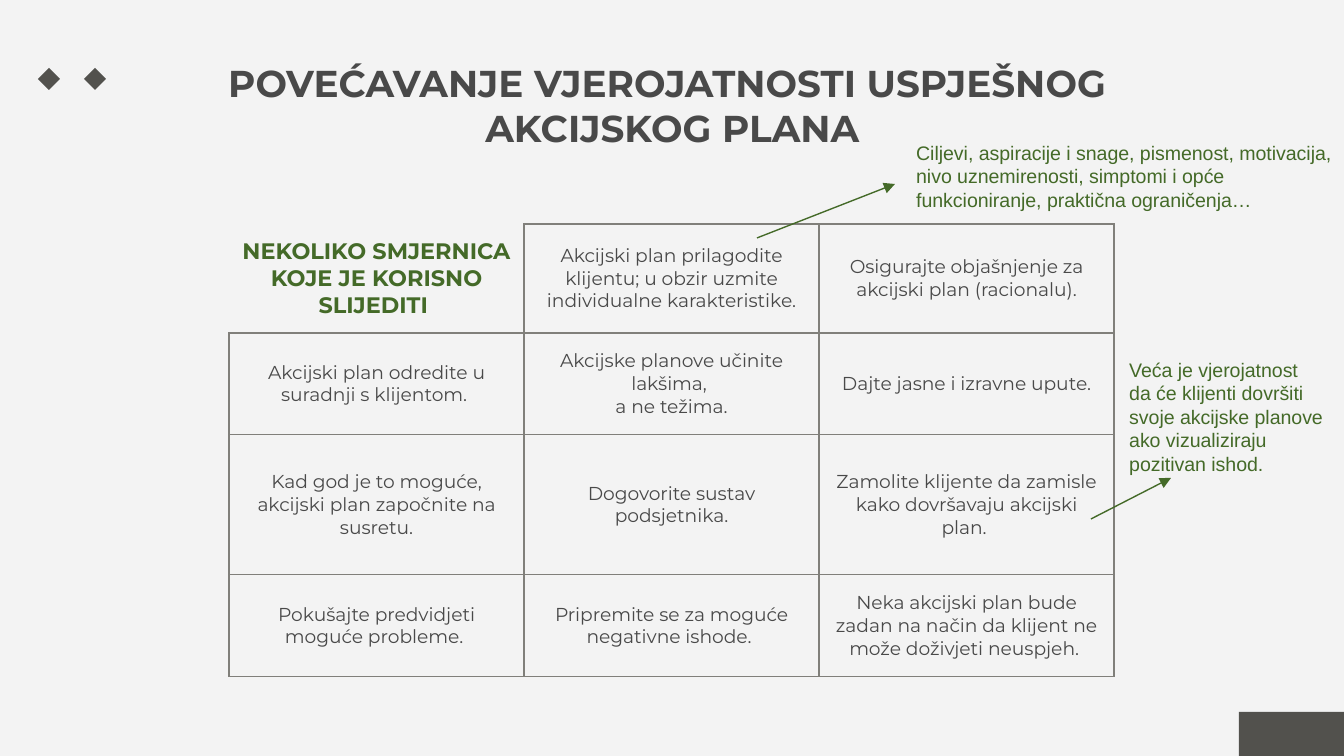
from dataclasses import dataclass

from lxml.etree import SubElement
from pptx import Presentation
from pptx.dml.color import RGBColor
from pptx.enum.shapes import MSO_CONNECTOR, MSO_SHAPE
from pptx.enum.text import MSO_ANCHOR, PP_ALIGN
from pptx.oxml.ns import qn
from pptx.util import Pt


@dataclass(frozen=True)
class Theme:
    """Colours, fonts and type sizes of the slide."""
    paper: str = "F3F3F3"
    ink: str = "494949"
    mark: str = "52514D"
    rule: str = "807F7A"
    green: str = "446A28"
    sans: str = "Montserrat"
    plain: str = "Arial"
    title: float = 20
    head: float = 12
    body: float = 10
    note: float = 10.5
    line: float = 0.75


THEME = Theme()
SCALE = 914400 / 134.4
PAD = 13

TITLE = "POVEĆAVANJE VJEROJATNOSTI USPJEŠNOG \vAKCIJSKOG PLANA"
ROWS = [
    (109, ["NEKOLIKO SMJERNICA KOJE JE KORISNO SLIJEDITI ",
           "Akcijski plan prilagodite klijentu; u obzir uzmite individualne karakteristike.",
           "Osigurajte objašnjenje za akcijski plan (racionalu)."]),
    (102, ["Akcijski plan odredite u suradnji s klijentom. ",
           "Akcijske planove učinite lakšima, \na ne težima.",
           "Dajte jasne i izravne upute."]),
    (140, ["Kad god je to moguće, akcijski plan započnite na susretu.",
           "Dogovorite sustav podsjetnika.",
           "Zamolite klijente da zamisle kako dovršavaju akcijski plan. "]),
    (102, ["Pokušajte predvidjeti moguće probleme. ",
           "Pripremite se za moguće negativne ishode. ",
           "Neka akcijski plan bude zadan na način da klijent ne može doživjeti neuspjeh. "]),
]
TRAITS = """Ciljevi, aspiracije i snage, pismenost, motivacija,
nivo uznemirenosti, simptomi i opće
funkcioniranje, praktična ograničenja…"""
VISION = """Veća je vjerojatnost
da će klijenti dovršiti
svoje akcijske planove
ako vizualiziraju
pozitivan ishod."""


def px(*nums):
    """Turn pixel lengths into a list of EMU."""
    return [round(num * SCALE) for num in nums]


def hue(code):
    """Return the colour for a hex code."""
    return RGBColor.from_string(code)


def write(frame, text, size=THEME.body, font=THEME.sans, color=THEME.ink,
          bold=False, align=PP_ALIGN.CENTER):
    """Fill a text frame, one paragraph for each line."""
    frame.text = text
    for para in frame.paragraphs:
        para.alignment = align
        para.font.size = Pt(size)
        para.font.name = font
        para.font.bold = bold
        para.font.color.rgb = hue(color)


def block(slide, kind, box):
    """Add a solid shape without outline."""
    shape = slide.shapes.add_shape(kind, *px(*box))
    shape.shadow.inherit = False
    shape.fill.solid()
    shape.fill.fore_color.rgb = hue(THEME.mark)
    shape.line.fill.background()


def marks(slide, box):
    """Place the two diamonds and the corner block within the page box."""
    left, top, width, height = box
    for step in range(2):
        block(slide, MSO_SHAPE.DIAMOND, (left + 38 + 46 * step, top + 68, 22, 22))
    block(slide, MSO_SHAPE.RECTANGLE,
          (left + width - 105, top + height - 44, 105, 44))


def title(slide, box):
    """Place the centred heading."""
    frame = slide.shapes.add_textbox(*px(*box)).text_frame
    frame.word_wrap = True
    frame.margin_top = frame.margin_bottom = px(PAD)[0]
    write(frame, TITLE, size=THEME.title, bold=True)


def edge(cell, side, color, width):
    """Draw one side of a table cell."""
    line = SubElement(cell._tc.get_or_add_tcPr(), qn(f"a:ln{side}"), w=str(Pt(width)))
    fill = SubElement(line, qn("a:solidFill"))
    SubElement(fill, qn("a:srgbClr"), val=color)


def grid(slide, box):
    """Place the table of guidelines, its first cell open at the corner."""
    cols = len(ROWS[0][1])
    table = slide.shapes.add_table(len(ROWS), cols, *px(*box)).table
    table.first_row = table.horz_banding = False
    for col in table.columns:
        col.width = px(box[2] / cols)[0]
    for y, (tall, texts) in enumerate(ROWS):
        table.rows[y].height = px(tall)[0]
        for x, text in enumerate(texts):
            cell = table.cell(y, x)
            head = x == y == 0
            cell.vertical_anchor = MSO_ANCHOR.MIDDLE
            cell.margin_left = cell.margin_right = px(PAD)[0]
            cell.margin_top = cell.margin_bottom = px(PAD)[0]
            for side in "LRTB":
                if head and side in "LT":
                    edge(cell, side, THEME.paper, 1)
                else:
                    edge(cell, side, THEME.rule, THEME.line)
            cell.fill.background()
            if head:
                write(cell.text_frame, text, size=THEME.head,
                      color=THEME.green, bold=True)
            else:
                write(cell.text_frame, text)


def note(slide, box, text, start, end, wrap=True):
    """Place a green remark and its arrow, both set out from the box corner."""
    left, top = box[:2]
    frame = slide.shapes.add_textbox(*px(*box)).text_frame
    frame.word_wrap = wrap
    write(frame, text, size=THEME.note, font=THEME.plain,
          color=THEME.green, align=PP_ALIGN.LEFT)
    ends = px(left + start[0], top + start[1], left + end[0], top + end[1])
    arrow = slide.shapes.add_connector(MSO_CONNECTOR.STRAIGHT, *ends)
    arrow.line.color.rgb = hue(THEME.green)
    arrow.line.width = Pt(THEME.line)
    props = arrow._element.spPr
    SubElement(props.find(qn("a:ln")), qn("a:tailEnd"), type="triangle")
    SubElement(props, qn("a:effectLst"))


def main():
    """Build and save the slide."""
    deck = Presentation()
    deck.slide_width, deck.slide_height = px(1344, 756)
    slide = deck.slides.add_slide(deck.slide_layouts[6])
    slide.background.fill.solid()
    slide.background.fill.fore_color.rgb = hue(THEME.paper)
    marks(slide, (0, 0, 1344, 756))
    title(slide, (106, 47, 1133, 85))
    grid(slide, (229, 224, 885, sum(tall for tall, _ in ROWS)))
    note(slide, (903, 134, 456, 85), TRAITS, (-146, 104), (-8, 50), wrap=False)
    note(slide, (1116, 351, 379, 132), VISION, (-25, 168), (55, 127))
    deck.save("out.pptx")


if __name__ == "__main__":
    main()
